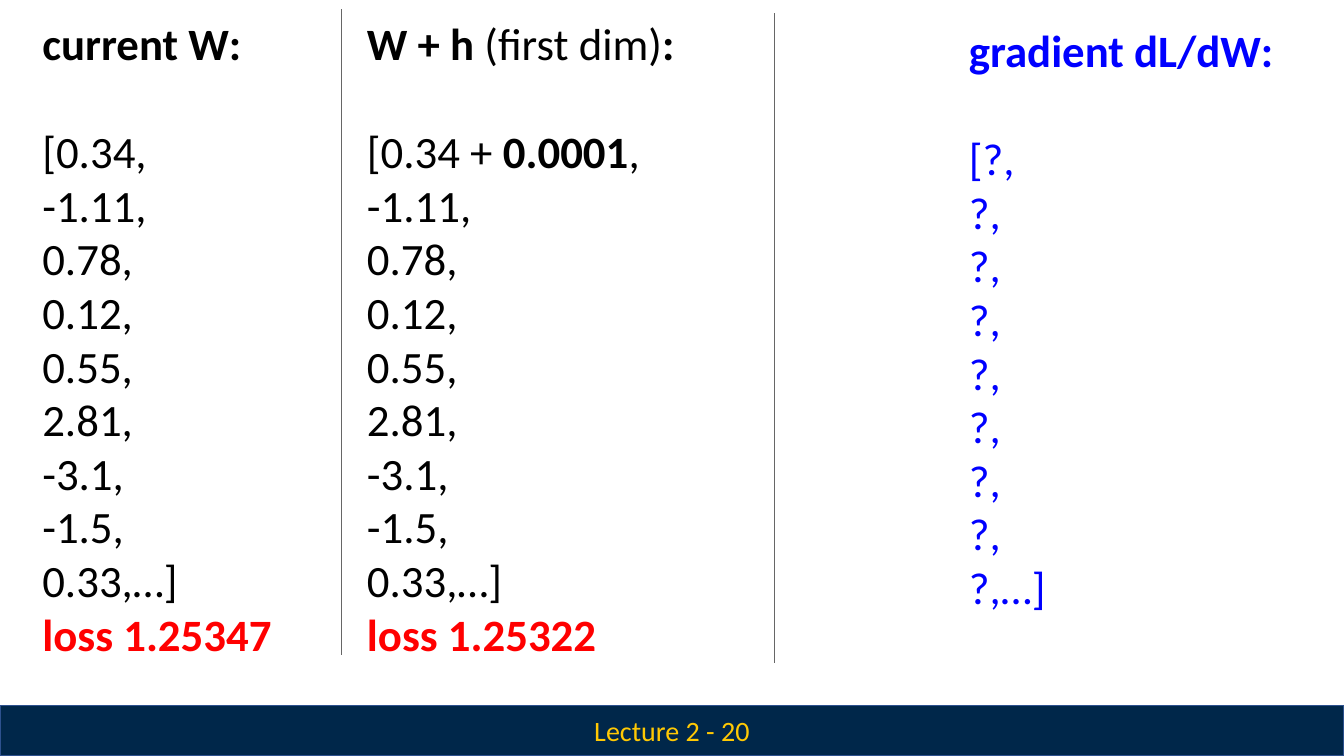
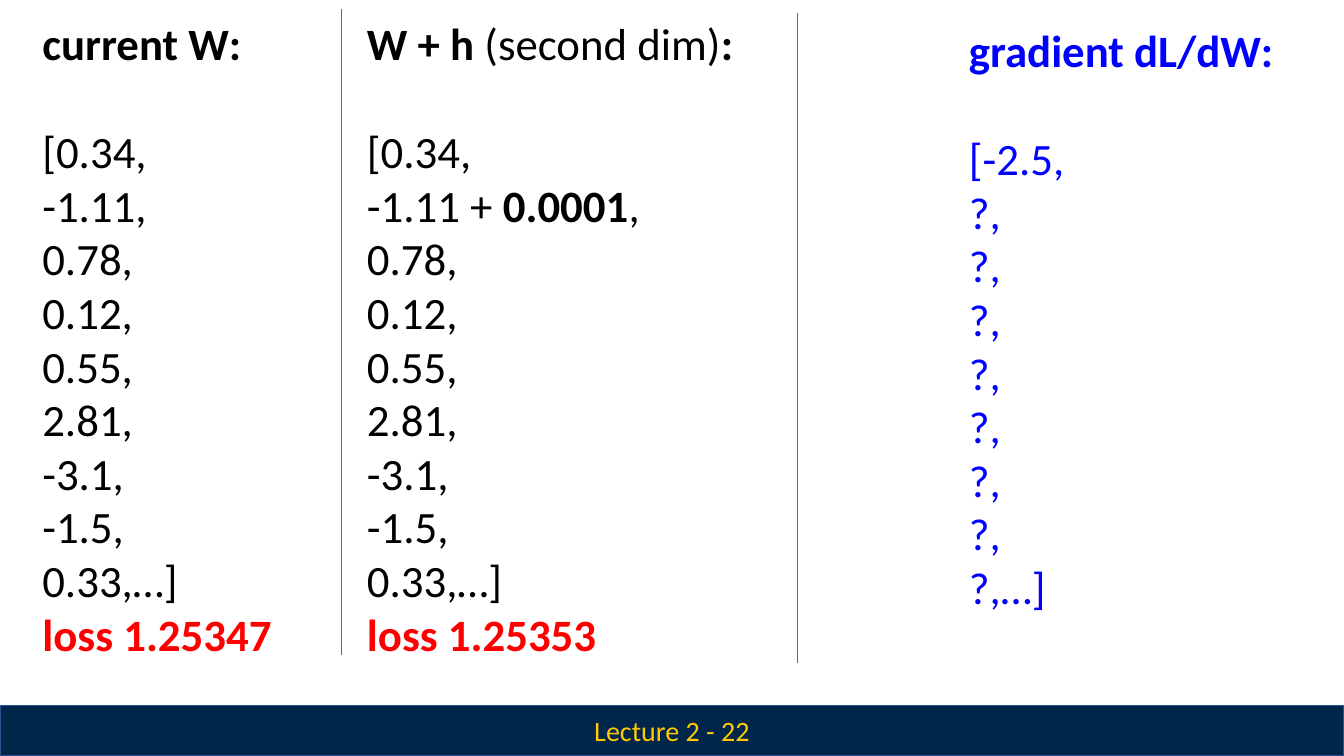
from lxml import etree
from pptx import Presentation
from pptx.dml.color import RGBColor
from pptx.enum.shapes import MSO_CONNECTOR, MSO_SHAPE
from pptx.enum.text import MSO_ANCHOR, MSO_AUTO_SIZE, PP_ALIGN
from pptx.oxml.ns import qn
from pptx.util import Inches, Pt

STRAIGHT = MSO_CONNECTOR.STRAIGHT
RECTANGLE = MSO_SHAPE.RECTANGLE
TOP, MIDDLE = MSO_ANCHOR.TOP, MSO_ANCHOR.MIDDLE
LEFT, CENTER = PP_ALIGN.LEFT, PP_ALIGN.CENTER

BLACK = RGBColor(0x00, 0x00, 0x00)
BLUE = RGBColor(0x00, 0x00, 0xFF)
RED = RGBColor(0xFF, 0x00, 0x00)
GREY = RGBColor(0x66, 0x66, 0x66)
NAVY = RGBColor(0x00, 0x27, 0x4A)
BAND_EDGE = RGBColor(0x2D, 0x51, 0x8E)
GOLD = RGBColor(0xFF, 0xC9, 0x04)

FONT = "Calibri"
TEXT_SIZE = Pt(32)
ROW_PITCH = Pt(38.3)
SLIDE_WIDTH, SLIDE_HEIGHT = Inches(13.33), Inches(7.5)
BAND_HEIGHT = Inches(0.5)
HEADING_HEIGHT = Inches(0.56)
LIST_OFFSET = Inches(1.07)
LIST_HEIGHT = Inches(5.35)
FRAME_FORMAT = {
    "margin_left": Inches(0.01), "margin_right": 0,
    "margin_top": Inches(0.01), "margin_bottom": 0,
    "word_wrap": True, "auto_size": MSO_AUTO_SIZE.NONE, "vertical_anchor": TOP,
}

WEIGHTS = ["0.34", "-1.11", "0.78", "0.12", "0.55", "2.81", "-3.1", "-1.5", "0.33"]
STEP = "0.0001"
# Each step: page, changed dimension, its name, new loss, known gradients, divider x
STEPS = [
    (20, 0, "first", "1.25322", [], 7.68),
    (22, 1, "second", "1.25353", ["-2.5"], 7.91),
]


def apply_format(target, values):
    for name, value in values.items():
        setattr(target, name, value)


def add_run(paragraph, text, color, bold=False, size=TEXT_SIZE):
    run = paragraph.add_run()
    run.text = text
    apply_format(run.font, {"name": FONT, "size": size, "bold": bold})
    run.font.color.rgb = color


def fill_text(shape, box, lines, color, spacing=1.0):
    """Place a shape and write lines, each a list of (text, bold, colour or None)."""
    apply_format(shape, dict(zip(("left", "top", "width", "height"), box)))
    frame = shape.text_frame
    apply_format(frame, FRAME_FORMAT)
    for index, line in enumerate(lines):
        paragraph = frame.add_paragraph() if index else frame.paragraphs[0]
        apply_format(paragraph, {
            "alignment": LEFT, "line_spacing": spacing,
            "space_before": Pt(0 if index else 1), "space_after": Pt(0),
        })
        properties = paragraph._p.get_or_add_pPr()
        apply_no_bullet(properties)
        for text, bold, run_color in line:
            add_run(paragraph, text, run_color or color, bold)


def apply_no_bullet(properties):
    properties.set("marL", "0")
    properties.set("indent", "0")
    etree.SubElement(properties, qn("a:buNone"))


def vector_lines(values, changed=None):
    """Write values as a bracketed vector, with the step added to one of them."""
    lines = []
    for index, value in enumerate(values):
        text = "[" + value if index == 0 else value
        end = ",…]" if index == len(values) - 1 else ","
        if index == changed:
            lines.append([(text + " + ", False, None), (STEP, True, None),
                          (end, False, None)])
        else:
            lines.append([(text + end, False, None)])
    return lines


def loss_line(loss):
    return [("loss " + loss, True, RED)]


def add_column(slide, left, top, width, heading, lines, color=BLACK, holders=None):
    """Place a heading and its vector, in placeholders or in new text boxes."""
    heading_box = (left, top, width, HEADING_HEIGHT)
    list_box = (left, top + LIST_OFFSET, width, LIST_HEIGHT)
    if holders is None:
        holders = [slide.shapes.add_textbox(*box) for box in (heading_box, list_box)]
    fill_text(holders[0], heading_box, [heading], color)
    fill_text(holders[1], list_box, lines, color, ROW_PITCH)


def add_divider(slide, left, top, height):
    line = slide.shapes.add_connector(STRAIGHT, left, top, left, top + height)
    line.line.color.rgb = GREY
    line.line.width = Pt(0.75)
    etree.SubElement(line._element.spPr, qn("a:effectLst"))


def add_footer(slide, page):
    band = slide.shapes.add_shape(
        RECTANGLE, 0, SLIDE_HEIGHT - BAND_HEIGHT, SLIDE_WIDTH, BAND_HEIGHT)
    band.shadow.inherit = False
    band.fill.solid()
    band.fill.fore_color.rgb = NAVY
    band.line.color.rgb = BAND_EDGE
    band.line.width = Pt(1)
    band.text_frame.vertical_anchor = MIDDLE
    paragraph = band.text_frame.paragraphs[0]
    paragraph.alignment = CENTER
    add_run(paragraph, f"Lecture 2 - {page}", GOLD, size=Pt(20))


def add_gradient_slide(presentation, page, changed, dimension, loss, known, divider):
    slide = presentation.slides.add_slide(presentation.slide_layouts[1])
    add_footer(slide, page)

    # Current weights
    add_column(slide, Inches(0.41), Inches(0.15), Inches(2.9),
               [("current W:", True, None)],
               vector_lines(WEIGHTS) + [loss_line("1.25347")],
               holders=[slide.shapes.title, slide.placeholders[1]])
    add_divider(slide, Inches(3.39), Inches(0.09), Inches(6.41))

    # Weights with one dimension shifted
    add_column(slide, Inches(3.63), Inches(0.15), Inches(4),
               [("W + h ", True, None), (f"({dimension} dim)", False, None),
                (":", True, None)],
               vector_lines(WEIGHTS, changed) + [loss_line(loss)])
    add_divider(slide, Inches(divider), Inches(0.13), Inches(6.45))

    # Gradient found so far
    unknown = ["?"] * (len(WEIGHTS) - len(known))
    add_column(slide, Inches(9.6), Inches(0.22), Inches(3.4),
               [("gradient dL/dW:", True, None)],
               vector_lines(known + unknown), BLUE)


def main():
    presentation = Presentation()
    apply_format(presentation, {"slide_width": SLIDE_WIDTH, "slide_height": SLIDE_HEIGHT})
    for step in STEPS:
        add_gradient_slide(presentation, *step)
    presentation.save("out.pptx")


if __name__ == "__main__":
    main()
